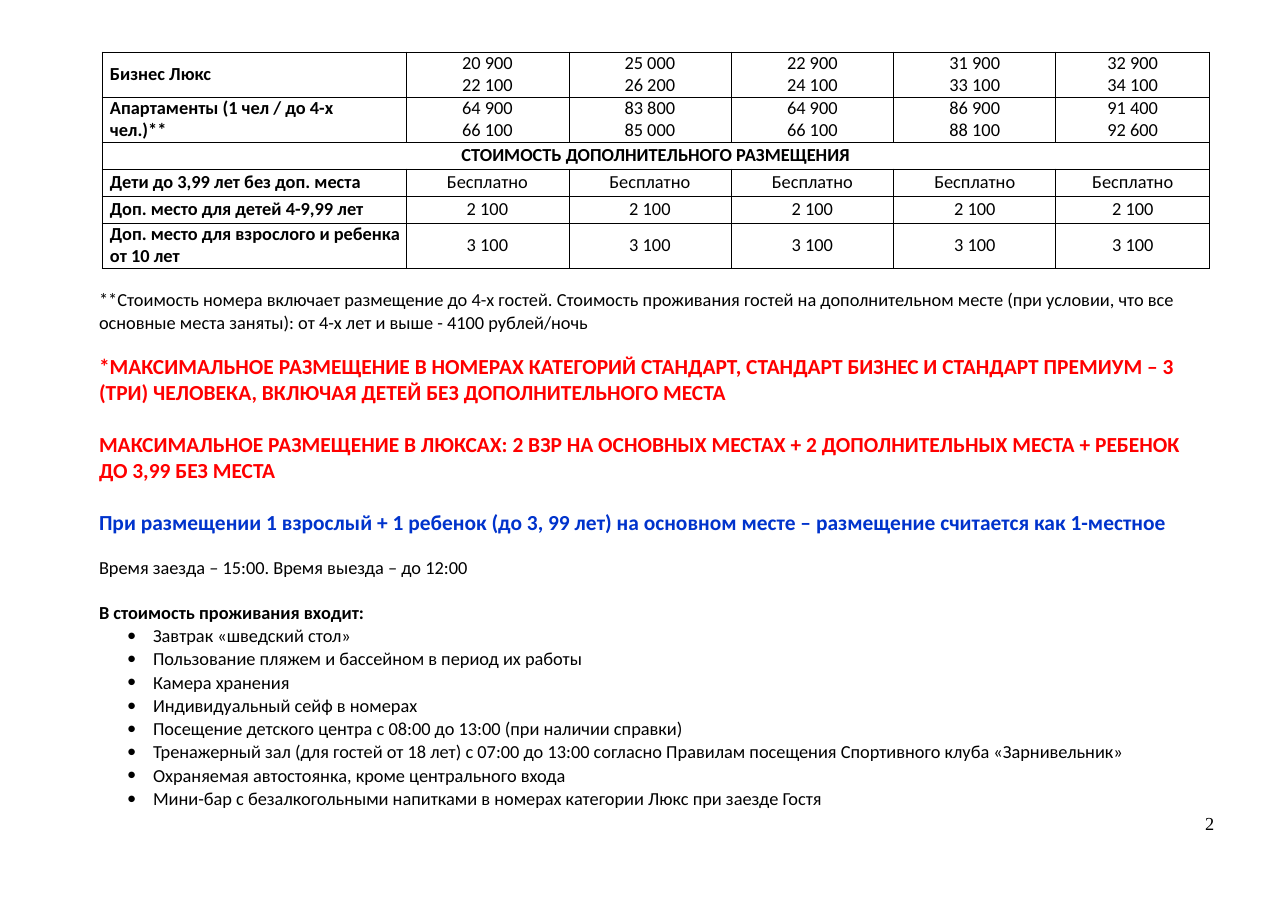
from lxml.etree import SubElement
from pptx import Presentation
from pptx.dml.color import RGBColor
from pptx.enum.text import MSO_ANCHOR, MSO_AUTO_SIZE, PP_ALIGN
from pptx.oxml.ns import qn
from pptx.util import Pt

# Content
SECTION = "СТОИМОСТЬ ДОПОЛНИТЕЛЬНОГО РАЗМЕЩЕНИЯ"
PRICES = [
    ("Бизнес Люкс", ["20 900\n22 100", "25 000\n26 200", "22 900\n24 100",
                     "31 900\n33 100", "32 900\n34 100"]),
    ("Апартаменты (1 чел / до 4-х\nчел.)**",
     ["64 900\n66 100", "83 800\n85 000", "64 900\n66 100",
      "86 900\n88 100", "91 400\n92 600"]),
    (SECTION, []),
    ("Дети до 3,99 лет без доп. места", ["Бесплатно"] * 5),
    ("Доп. место для детей 4-9,99 лет", ["2 100"] * 5),
    ("Доп. место для взрослого и ребенка от 10 лет", ["3 100"] * 5),
]
COLUMN_WIDTHS = [304, 163, 162, 163, 162, 154]
ROW_HEIGHTS = [45, 45, 27, 27, 27, 45]

BLACK, RED, BLUE = "000000", "FF0000", "0033CC"
# text, size, colour, bold, space before, line spacing
NOTES = [
    ("**Стоимость номера включает размещение до 4-х гостей. Стоимость проживания "
     "гостей на дополнительном месте (при условии, что все основные места заняты): "
     "от 4-х лет и выше - 4100 рублей/ночь", 12, BLACK, False, 0.8, 1.02),
    ("*МАКСИМАЛЬНОЕ РАЗМЕЩЕНИЕ В НОМЕРАХ КАТЕГОРИЙ СТАНДАРТ, СТАНДАРТ БИЗНЕС И "
     "СТАНДАРТ ПРЕМИУМ – 3 (ТРИ) ЧЕЛОВЕКА, ВКЛЮЧАЯ ДЕТЕЙ БЕЗ ДОПОЛНИТЕЛЬНОГО МЕСТА",
     14, RED, True, 13.3, 1.01),
    ("МАКСИМАЛЬНОЕ РАЗМЕЩЕНИЕ В ЛЮКСАХ: 2 ВЗР НА ОСНОВНЫХ МЕСТАХ + "
     "2 ДОПОЛНИТЕЛЬНЫХ МЕСТА + РЕБЕНОК ДО 3,99 БЕЗ МЕСТА", 14, RED, True, 17, 1.01),
    ("При размещении 1 взрослый + 1 ребенок (до 3, 99 лет) на основном месте – "
     "размещение считается как 1-местное", 14, BLUE, True, 17, 1),
    ("Время заезда – 15:00. Время выезда – до 12:00", 12, BLACK, False, 13.8, 1),
    ("В стоимость проживания входит:", 12, BLACK, True, 15, 1),
]
INCLUDED = [
    "Завтрак «шведский стол»",
    "Пользование пляжем и бассейном в период их работы",
    "Камера хранения",
    "Индивидуальный сейф в номерах",
    "Посещение детского центра с 08:00 до 13:00 (при наличии справки)",
    "Тренажерный зал (для гостей от 18 лет) с 07:00 до 13:00 согласно Правилам "
    "посещения Спортивного клуба «Зарнивельник»",
    "Охраняемая автостоянка, кроме центрального входа",
    "Мини-бар с безалкогольными напитками в номерах категории Люкс при заезде Гостя",
]
PAGE_NUMBER = "2"


def px(length):
    return round(length * 914400 / 110.2)


def color(value):
    return RGBColor.from_string(value)


def style(paragraph, size, fill=BLACK, bold=False, name="Calibri"):
    for run in paragraph.runs:
        run.font.size = Pt(size)
        run.font.name = name
        run.font.bold = bold
        run.font.color.rgb = color(fill)


def indent(paragraph, left, first=0, bullet=None):
    properties = paragraph._p.get_or_add_pPr()
    properties.set("marL", str(px(left)))
    properties.set("indent", str(px(first)))
    if bullet:
        SubElement(properties, qn("a:buFont"), typeface="Calibri")
        SubElement(properties, qn("a:buChar"), char=bullet)
    else:
        SubElement(properties, qn("a:buNone"))


def clear_margins(frame):
    frame.margin_left = frame.margin_right = 0
    frame.margin_top = frame.margin_bottom = 0


def fill_cell(cell, text, bold, align):
    cell.text_frame.text = text
    clear_margins(cell)
    cell.margin_left = px(8) if align == PP_ALIGN.LEFT else 0
    cell.vertical_anchor = MSO_ANCHOR.MIDDLE
    for paragraph in cell.text_frame.paragraphs:
        paragraph.alignment = align
        style(paragraph, 12, bold=bold)


def frame_cell(cell):
    properties = cell._tc.get_or_add_tcPr()
    for side in ("lnL", "lnR", "lnT", "lnB"):
        line = SubElement(properties, qn(f"a:{side}"), w=str(Pt(0.5)))
        SubElement(SubElement(line, qn("a:solidFill")), qn("a:srgbClr"), val=BLACK)
    cell.fill.background()


deck = Presentation()
deck.slide_width, deck.slide_height = px(1288), px(911)
slide = deck.slides.add_slide(deck.slide_layouts[1])
title = slide.shapes.title._element
title.getparent().remove(title)

# Price table
prices = slide.shapes.add_table(
    len(PRICES), len(COLUMN_WIDTHS), px(102), px(52),
    px(sum(COLUMN_WIDTHS)), px(sum(ROW_HEIGHTS))).table
prices.first_row = prices.horz_banding = False
for column, width in zip(prices.columns, COLUMN_WIDTHS):
    column.width = px(width)
for r, (label, values) in enumerate(PRICES):
    prices.rows[r].height = px(ROW_HEIGHTS[r])
    for c in range(len(COLUMN_WIDTHS)):
        frame_cell(prices.cell(r, c))
    if not values:
        prices.cell(r, 0).merge(prices.cell(r, len(COLUMN_WIDTHS) - 1))
    fill_cell(prices.cell(r, 0), label, True,
              PP_ALIGN.LEFT if values else PP_ALIGN.CENTER)
    for c, value in enumerate(values, 1):
        fill_cell(prices.cell(r, c), value, False, PP_ALIGN.CENTER)

# Notes and list of included services
body = slide.placeholders[1]
body.left, body.top, body.width, body.height = px(98), px(287), px(1090), px(526)
notes = body.text_frame
clear_margins(notes)
notes.margin_top = px(1)
notes.word_wrap = True
notes.auto_size = MSO_AUTO_SIZE.NONE
notes.vertical_anchor = MSO_ANCHOR.TOP
services = [(text, 12, BLACK, False, 0.8, 1) for text in INCLUDED]
lines = NOTES + services
notes.text = "\n".join(line[0] for line in lines)
for i, (paragraph, line) in enumerate(zip(notes.paragraphs, lines)):
    _, size, fill, bold, before, spacing = line
    paragraph.space_before = Pt(before)
    paragraph.line_spacing = spacing
    if i < len(NOTES):
        indent(paragraph, 1)
    else:
        indent(paragraph, 55, -26, "•")
    style(paragraph, size, fill, bold)

# Page number
page = slide.shapes.add_textbox(px(1201), px(813), px(20), px(23)).text_frame
clear_margins(page)
page.word_wrap = True
page.text = PAGE_NUMBER
page.paragraphs[0].line_spacing = Pt(14.1)
indent(page.paragraphs[0], 4)
style(page.paragraphs[0], 12, name="Times New Roman")

deck.save("out.pptx")
